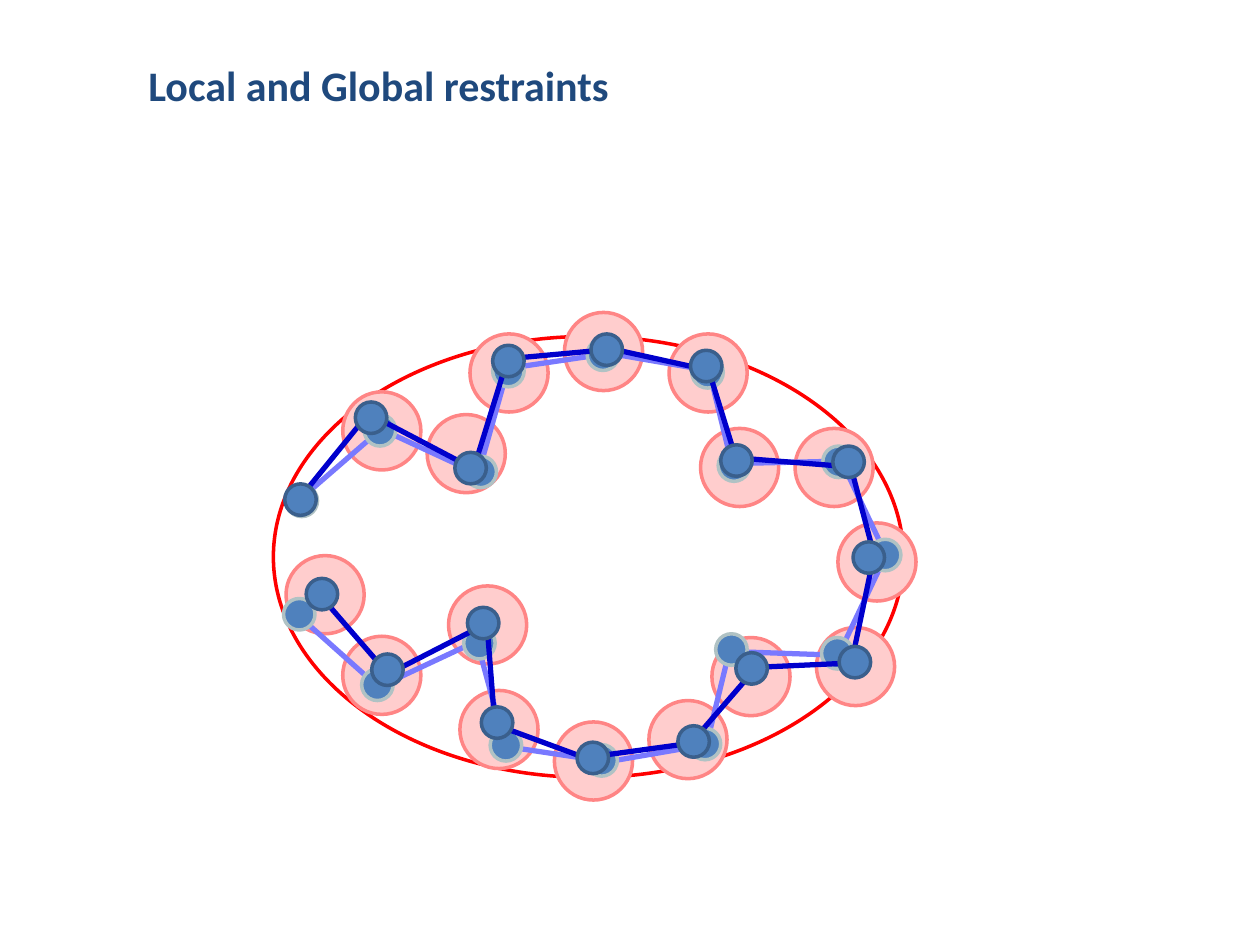
from lxml import etree
from pptx import Presentation
from pptx.dml.color import RGBColor
from pptx.enum import shapes, text
from pptx.oxml.ns import qn
from pptx.util import Emu, Pt

PX = 9144
PAGE = (1000, 750)
TITLE = "Local and Global restraints"
TITLE_BOX = (108, 42, 517, 50)
TITLE_FONT = {"name": "Calibri", "size": Pt(24), "bold": True}
GLOBAL_RESTRAINT = (217, 267, 500, 350)
LOCAL_SIZE, BEAD_SIZE = 62, 25
BEAD_FILL = "4F81BD"

LOCAL_RESTRAINTS = [
    (227, 441), (356, 465), (272, 505), (365, 548),
    (515, 556), (440, 573), (565, 506), (648, 498),
    (665, 415), (631, 340), (556, 340), (531, 265),
    (448, 248), (373, 265), (339, 329), (272, 311),
]

# Each step: bead left and top, then the start and end of the link to the next bead.
START_LOWER = [
    ((225, 475), (234, 486), (300, 545)),
    ((287, 531), (297, 547), (378, 509)),
    ((368, 498), (378, 507), (401, 592)),
    ((389, 579), (398, 592), (485, 605)),
    ((465, 591), (474, 606), (561, 591)),
    ((547, 578), (560, 594), (581, 508)),
    ((568, 503), (577, 517), (665, 520)),
    ((652, 506), (664, 523), (702, 443)),
]
START_UPPER = [
    ((227, 385), (235, 399), (302, 341)),
    ((289, 329), (299, 339), (379, 376)),
    ((369, 362), (379, 378), (403, 293)),
    ((391, 282), (399, 293), (487, 280)),
    ((466, 269), (475, 279), (562, 294)),
    ((549, 283), (562, 291), (583, 377)),
    ((570, 357), (578, 368), (667, 366)),
    ((653, 354), (666, 362), (704, 442)),
    ((690, 428), None, None),
]
REFINED = [
    ((226, 384), (235, 399), (291, 330)),
    ((282, 319), (292, 328), (370, 369)),
    ((361, 359), (375, 375), (401, 291)),
    ((391, 274), (400, 285), (488, 277)),
    ((469, 265), (477, 275), (563, 294)),
    ((548, 278), (560, 286), (586, 370)),
    ((572, 353), (580, 363), (668, 370)),
    ((661, 354), (673, 362), (696, 449)),
    ((677, 430), (694, 439), (676, 525)),
    ((666, 513), (680, 526), (592, 530)),
    ((584, 518), (601, 529), (543, 596)),
    ((538, 576), (555, 589), (467, 601)),
    ((458, 589), (474, 605), (390, 574)),
    ((382, 561), (393, 578), (386, 489)),
    ((371, 482), (388, 494), (308, 535)),
    ((295, 519), (309, 536), (251, 469)),
    ((243, 459), None, None),
]
CHAINS = [
    (START_LOWER, "7979FF", "B0C2C4"),
    (START_UPPER, "7979FF", "B0C2C4"),
    (REFINED, "0000CC", "3A5F8C"),
]


def px(*values):
    return [Emu(value * PX) for value in values]


def color(value):
    return RGBColor.from_string(value)


def add_circle(page, left, top, width, height, line, fill=None):
    circle = page.shapes.add_shape(
        shapes.MSO_SHAPE.OVAL, *px(left, top, width, height))
    circle.shadow.inherit = False
    if fill:
        circle.fill.solid()
        circle.fill.fore_color.rgb = color(fill)
    else:
        circle.fill.background()
    circle.line.color.rgb = color(line)
    circle.line.width = Pt(2)


def add_link(page, start, end, line):
    link = page.shapes.add_connector(
        shapes.MSO_CONNECTOR.STRAIGHT, *px(*start, *end))
    link.line.color.rgb = color(line)
    link.line.width = Pt(3)
    etree.SubElement(link._element.spPr, qn("a:effectLst"))


def add_title(page):
    box = page.shapes.add_textbox(*px(*TITLE_BOX))
    frame = box.text_frame
    frame.word_wrap = True
    frame.auto_size = text.MSO_AUTO_SIZE.SHAPE_TO_FIT_TEXT
    span = frame.paragraphs[0].add_run()
    span.text = TITLE
    for name, value in TITLE_FONT.items():
        setattr(span.font, name, value)
    span.font.color.rgb = color("1F497D")


def main():
    deck = Presentation()
    deck.slide_width, deck.slide_height = px(*PAGE)
    page = deck.slides.add_slide(deck.slide_layouts[6])
    add_circle(page, *GLOBAL_RESTRAINT, "FF0000")
    add_title(page)
    for left, top in LOCAL_RESTRAINTS:
        add_circle(page, left, top, LOCAL_SIZE, LOCAL_SIZE, "FF8585", "FFCDCD")
    for chain, link_color, bead_line in CHAINS:
        for bead, start, end in chain:
            if start:
                add_link(page, start, end, link_color)
            add_circle(page, *bead, BEAD_SIZE, BEAD_SIZE, bead_line, BEAD_FILL)
    deck.save("out.pptx")


if __name__ == "__main__":
    main()
